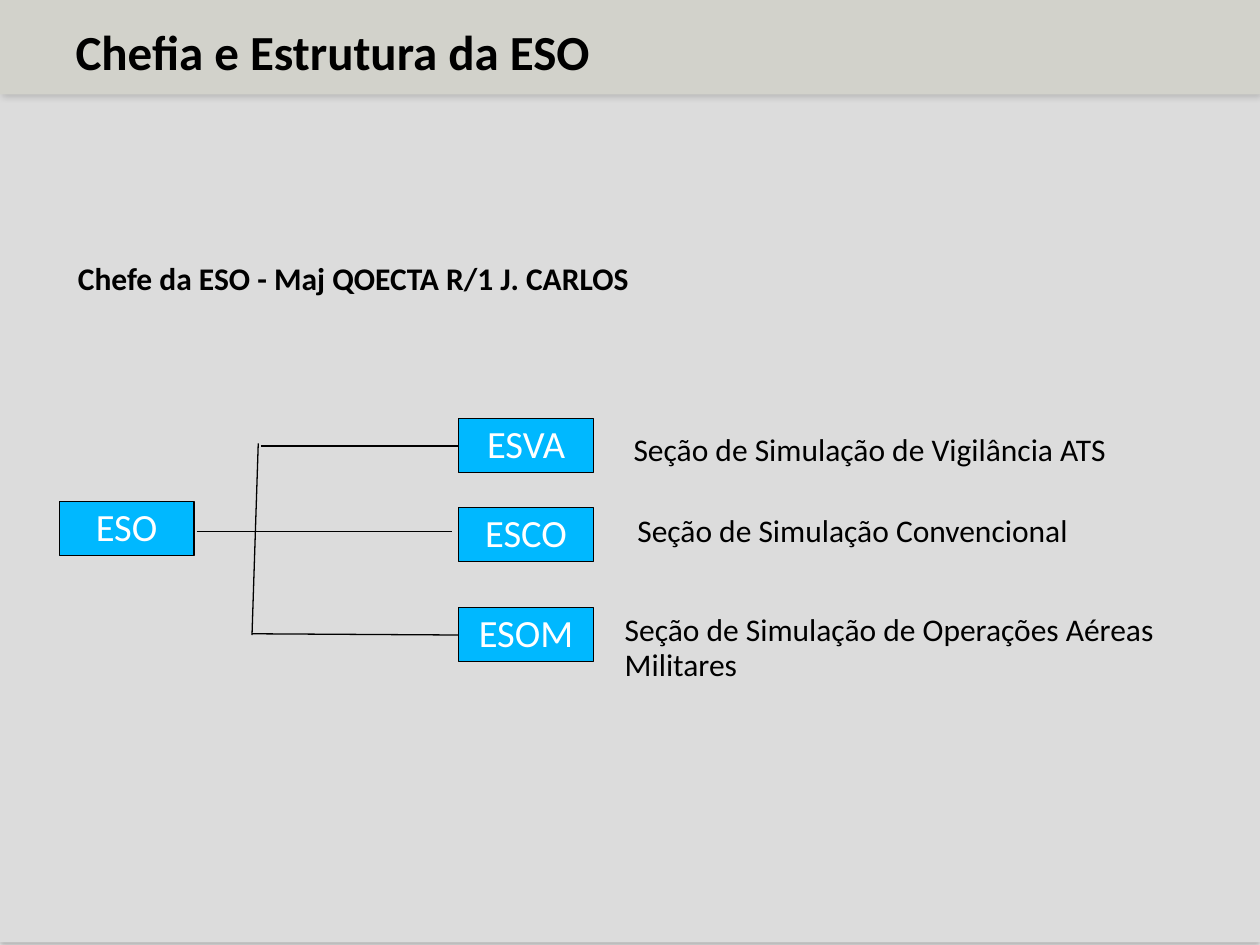
import lxml.etree
import pptx
import pptx.dml.color
import pptx.enum.shapes
import pptx.enum.text
import pptx.oxml.ns
import pptx.util

Inches = pptx.util.Inches
Anchor = pptx.enum.text.MSO_ANCHOR
Align = pptx.enum.text.PP_ALIGN

COLORS = {
    "black": "000000",
    "white": "FFFFFF",
    "background": "DCDCDC",
    "header": "D2D2CB",
    "unit": "00B8FF",
}


def rgb(name):
    return pptx.dml.color.RGBColor.from_string(COLORS[name])


def add_effects(shape):
    properties = shape._element.spPr
    return lxml.etree.SubElement(properties, pptx.oxml.ns.qn("a:effectLst"))


def write_text(shape, text, size=18, color="black", bold=False,
               align=Align.LEFT, anchor=Anchor.TOP, wrap=True):
    frame = shape.text_frame
    frame.word_wrap = wrap
    frame.auto_size = pptx.enum.text.MSO_AUTO_SIZE.NONE
    frame.vertical_anchor = anchor
    para = frame.paragraphs[0]
    para.alignment = align
    para.line_spacing = 0.93
    para.space_before = pptx.util.Pt(0)
    span = para.add_run()
    span.text = text
    span.font.name = "Calibri"
    span.font.size = pptx.util.Pt(size)
    span.font.bold = bold
    span.font.color.rgb = rgb(color)


class StructureSlide:
    unit_width = 1.07
    unit_height = 0.43
    line_width = pptx.util.Pt(0.75)

    def __init__(self, deck):
        self.page = deck.slides.add_slide(deck.slide_layouts[5])

    def rectangle(self, left, top, width, height, color):
        box = self.page.shapes.add_shape(
            pptx.enum.shapes.MSO_SHAPE.RECTANGLE,
            Inches(left), Inches(top), Inches(width), Inches(height))
        box.shadow.inherit = False
        box.fill.solid()
        box.fill.fore_color.rgb = rgb(color)
        box.line.fill.background()
        return box

    def panel(self, height, color, opacity, blur, distance, angle):
        box = self.rectangle(0, 0, 10, height, color)
        effects = box._element.spPr.find(pptx.oxml.ns.qn("a:effectLst"))
        shadow = lxml.etree.SubElement(
            effects, pptx.oxml.ns.qn("a:outerShdw"),
            blurRad=str(pptx.util.Pt(blur)), dist=str(pptx.util.Pt(distance)),
            dir=str(angle * 60000), rotWithShape="0")
        tint = lxml.etree.SubElement(
            shadow, pptx.oxml.ns.qn("a:srgbClr"), val=COLORS["black"])
        lxml.etree.SubElement(
            tint, pptx.oxml.ns.qn("a:alpha"), val=str(opacity * 1000))

    def title(self, text):
        title = self.page.shapes.title
        title.left, title.top = Inches(0.5), Inches(0.16)
        title.width, title.height = Inches(9), Inches(0.56)
        self.page.shapes._spTree.append(title._element)
        write_text(title, text, size=28, bold=True)

    def label(self, text, left, top, width, height=0.37, **style):
        box = self.page.shapes.add_textbox(
            Inches(left), Inches(top), Inches(width), Inches(height))
        write_text(box, text, **style)

    def unit(self, text, left, top):
        box = self.rectangle(left, top, self.unit_width, self.unit_height, "unit")
        box.line.color.rgb = rgb("black")
        box.line.width = self.line_width
        write_text(box, text, size=22, color="white",
                   align=Align.CENTER, anchor=Anchor.MIDDLE)

    def line(self, start, end):
        line = self.page.shapes.add_connector(
            pptx.enum.shapes.MSO_CONNECTOR.STRAIGHT,
            *(Inches(value) for value in start + end))
        line.line.color.rgb = rgb("black")
        line.line.width = self.line_width
        add_effects(line)


def main():
    deck = pptx.Presentation()
    deck.slide_width, deck.slide_height = Inches(10), Inches(7.5)
    slide = StructureSlide(deck)

    slide.panel(7.48, "background", opacity=35, blur=3.1, distance=1.8, angle=90)
    slide.panel(0.75, "header", opacity=16, blur=4, distance=1, angle=45)
    slide.title("Chefia e Estrutura da ESO")
    slide.label("Chefe da ESO - Maj QOECTA R/1 J. CARLOS", 0.52, 2.03, 4.88, bold=True)

    branches = [
        ((2.05, 3.52), (2, 5.04)),
        ((2.07, 3.54), (3.64, 3.54)),
        ((2, 5.03), (3.64, 5.04)),
        ((1.56, 4.22), (3.59, 4.22)),
    ]
    for start, end in branches:
        slide.line(start, end)

    slide.unit("ESO", 0.47, 3.98)
    for name, top in [("ESVA", 3.32), ("ESCO", 4.03), ("ESOM", 4.82)]:
        slide.unit(name, 3.64, top)

    slide.label("Seção de Simulação de Vigilância ATS", 4.93, 3.39, 4.21)
    slide.label("Seção de Simulação Convencional", 4.96, 4.03, 3.61, wrap=False)
    slide.label("Seção de Simulação de Operações Aéreas Militares",
                4.86, 4.82, 5, height=0.65)

    deck.save("out.pptx")


if __name__ == "__main__":
    main()
